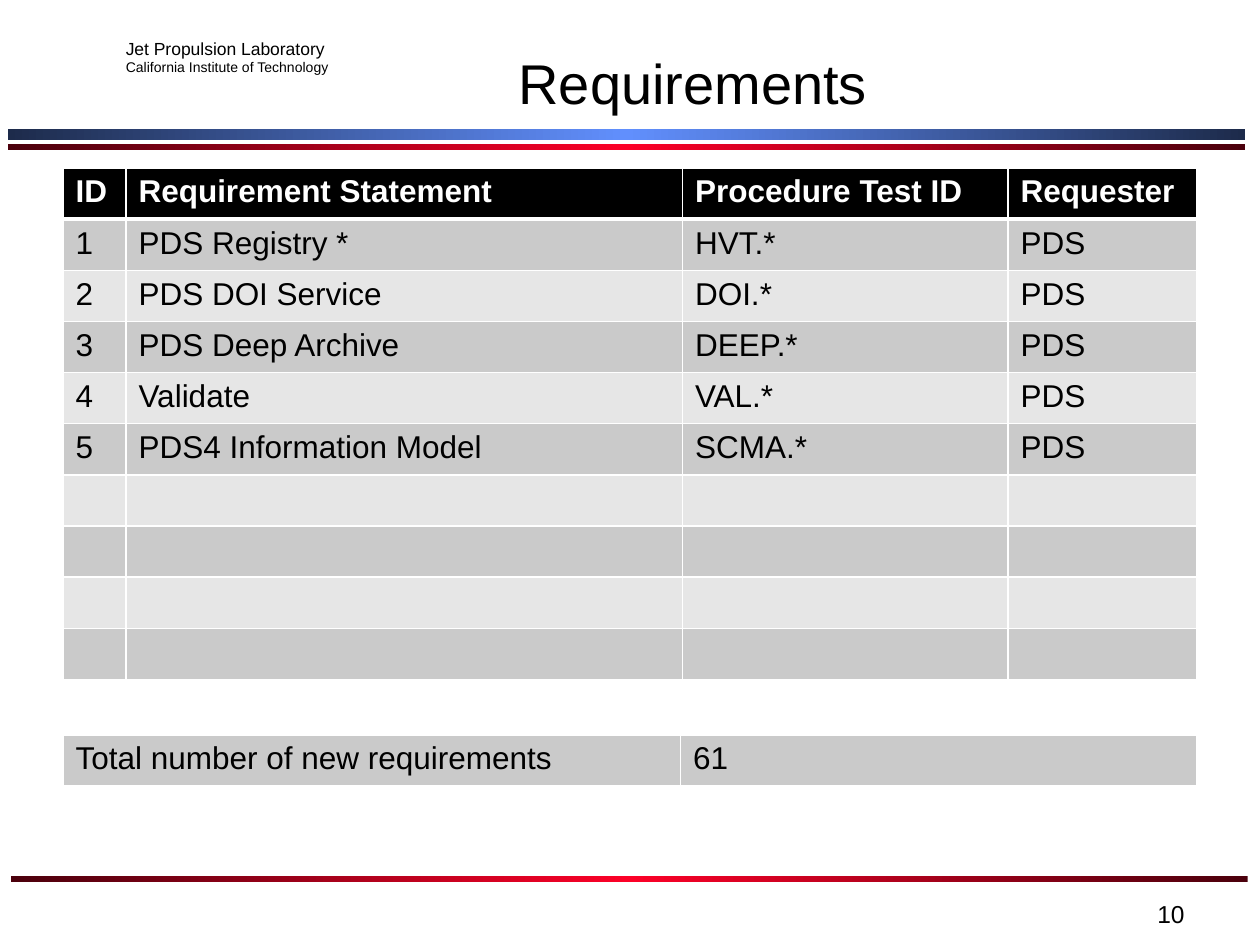
from copy import deepcopy

from lxml import etree
from pptx import Presentation
from pptx.dml.color import RGBColor
from pptx.enum import shapes, text
from pptx.oxml.ns import qn
from pptx.util import Pt

COLORS = {
    "ink": "000000", "paper": "FFFFFF",
    "navy": "1D2B4B", "blue": "618FFD",
    "maroon": "4B000C", "red": "FC0128",
    "band_dark": "CACACA", "band_light": "E6E6E6",
}
MARGIN, TABLE_WIDTH, ROW_HEIGHT = 36, 648, 29.23
RULE_WIDTH = 707
TITLE_ONLY = 5


def rgb(name):
    return RGBColor.from_string(COLORS[name])


class SlideBuilder:
    font_name = "Arial"

    def __init__(self, slide):
        self.slide = slide

    def set_text(self, paragraph, words, size, color="ink", bold=False, align=text.PP_ALIGN.LEFT):
        paragraph.alignment = align
        style = {"name": self.font_name, "size": Pt(size), "bold": bold}
        paragraph.text = words
        for key, value in style.items():
            setattr(paragraph.font, key, value)
        paragraph.font.color.rgb = rgb(color)

    def title(self, words, box):
        heading = self.slide.shapes.title
        for side, value in zip(("left", "top", "width", "height"), box):
            setattr(heading, side, Pt(value))
        frame = heading.text_frame
        layout = {"word_wrap": True, "auto_size": text.MSO_AUTO_SIZE.NONE,
                  "vertical_anchor": text.MSO_ANCHOR.MIDDLE}
        for key, value in layout.items():
            setattr(frame, key, value)
        self.set_text(frame.paragraphs[0], words, 32, align=text.PP_ALIGN.CENTER)

    def label(self, lines, box, align=text.PP_ALIGN.LEFT):
        frame = self.slide.shapes.add_textbox(*map(Pt, box)).text_frame
        frame.word_wrap = True
        for index, (words, size) in enumerate(lines):
            paragraph = frame.add_paragraph() if index else frame.paragraphs[0]
            self.set_text(paragraph, words, size, align=align)

    def rule(self, left, top, height, edge, middle):
        """A bar that fades from the edge colour to the middle colour and back."""
        bar = self.slide.shapes.add_shape(
            shapes.MSO_SHAPE.RECTANGLE, Pt(left), Pt(top), Pt(RULE_WIDTH), Pt(height))
        bar.shadow.inherit = False
        bar.line.fill.background()
        bar.fill.gradient()
        bar.fill.gradient_angle = 0
        stop_list = bar._element.spPr.find(".//" + qn("a:gsLst"))
        stop_list.insert(1, deepcopy(stop_list[0]))
        for stop, position, color in zip(bar.fill.gradient_stops, (0, 0.5, 1), (edge, middle, edge)):
            stop.position = position
            stop.color.rgb = rgb(color)

    def borders(self, cell, bottom):
        properties = cell._tc.get_or_add_tcPr()
        widths = {"a:lnL": 1, "a:lnR": 1, "a:lnT": 1, "a:lnB": bottom}
        for index, (tag, width) in enumerate(widths.items()):
            line = etree.Element(qn(tag), w=str(Pt(width)))
            fill = etree.SubElement(line, qn("a:solidFill"))
            etree.SubElement(fill, qn("a:srgbClr"), val=COLORS["paper"])
            properties.insert(index, line)

    def table(self, rows, column_widths, top, header=False):
        grid = self.slide.shapes.add_table(
            len(rows), len(column_widths), Pt(MARGIN), Pt(top),
            Pt(TABLE_WIDTH), Pt(ROW_HEIGHT * len(rows))).table
        grid.first_row = header
        grid.horz_banding = False
        for column, width in zip(grid.columns, column_widths):
            column.width = Pt(width)
        for r, row in enumerate(rows):
            is_header = header and r == 0
            band = "band_dark" if (r - header) % 2 == 0 else "band_light"
            for c, words in enumerate(row):
                cell = grid.cell(r, c)
                cell.fill.solid()
                cell.fill.fore_color.rgb = rgb("ink" if is_header else band)
                self.borders(cell, bottom=3 if is_header else 1)
                self.set_text(cell.text_frame.paragraphs[0], words, 18,
                              color="paper" if is_header else "ink", bold=is_header)


def main():
    deck = Presentation()
    deck.slide_width, deck.slide_height = Pt(720), Pt(540)
    page = SlideBuilder(deck.slides.add_slide(deck.slide_layouts[TITLE_ONLY]))

    # Header and footer rules
    page.rule(4.5, 74, 6, "navy", "blue")
    page.rule(4.5, 82.2, 3.5, "maroon", "red")
    page.rule(6, 500.4, 3.5, "maroon", "red")

    # Institution and title
    page.label([("Jet Propulsion Laboratory", 10), ("California Institute of Technology", 8)],
               (64.8, 18, 133.2, 28.8))
    page.title("Requirements", (192, 21.6, 408, 50.4))

    # Requirements, with spare rows below
    requirements = [
        ("PDS Registry *", "HVT.*"),
        ("PDS DOI Service", "DOI.*"),
        ("PDS Deep Archive", "DEEP.*"),
        ("Validate", "VAL.*"),
        ("PDS4 Information Model", "SCMA.*"),
    ]
    rows = [("ID", "Requirement Statement", "Procedure Test ID", "Requester")]
    rows += [(str(number), statement, test, "PDS")
             for number, (statement, test) in enumerate(requirements, 1)]
    rows += [("",) * 4] * 4
    page.table(rows, (36, 318, 186, 108), 96, header=True)

    # Total
    page.table([("Total number of new requirements", "61")], (352.8, 295.2), 420)

    # Page number
    page.label([("10", 14)], (516, 510, 168, 19.2), align=text.PP_ALIGN.RIGHT)

    deck.save("out.pptx")


if __name__ == "__main__":
    main()
